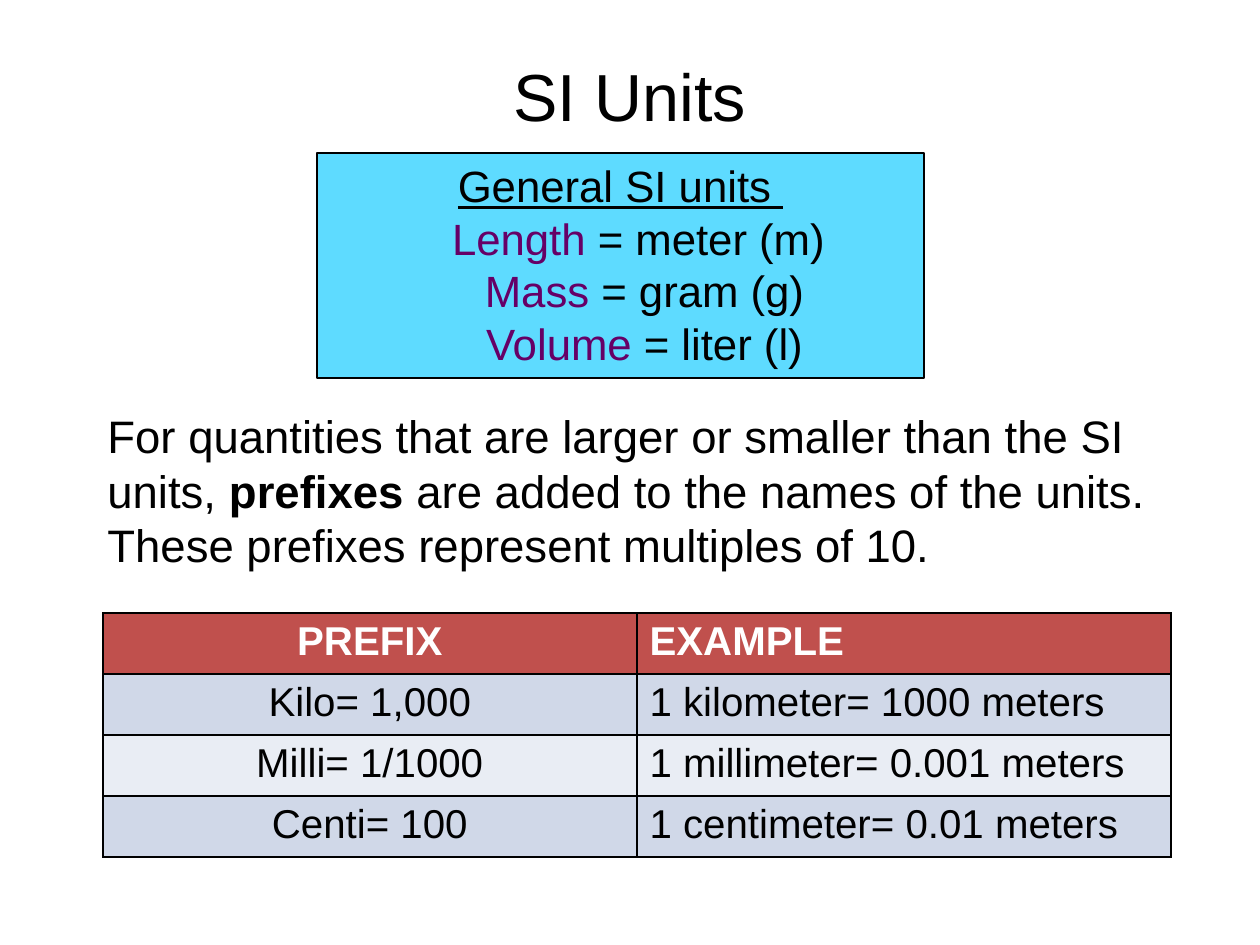
"""Build the SI Units slide."""
from dataclasses import dataclass

from pptx import Presentation
from pptx import util as u
from pptx.dml.color import RGBColor
from pptx.enum import shapes, text
from pptx.oxml import parse_xml
from pptx.oxml.ns import nsdecls

SCALE = 914400 / 126
CENTER = text.PP_ALIGN.CENTER
LEFT = text.PP_ALIGN.LEFT


@dataclass(frozen=True)
class Theme:
    font: str = "Arial"
    ink: str = "000000"
    white: str = "FFFFFF"
    quantity: str = "660066"
    box: str = "5EDBFF"
    header: str = "C0504D"
    bands: tuple = ("D0D8E8", "E9EDF4")
    title_size: int = 38
    box_size: int = 25
    body_size: int = 26
    table_size: int = 23


def px(length):
    return u.Emu(round(length * SCALE))


def add_run(paragraph, words, *, font, size, color, bold=False, underline=False):
    run = paragraph.add_run()
    run.text = words
    run.font.name = font
    run.font.size = u.Pt(size)
    run.font.color.rgb = RGBColor.from_string(color)
    run.font.bold = bold
    run.font.underline = underline


class SlideBuilder:
    def __init__(self, slide, theme):
        self.slide = slide
        self.theme = theme

    def add_words(self, paragraph, words, size, align=LEFT, color=None, **style):
        paragraph.alignment = align
        add_run(paragraph, words, font=self.theme.font, size=size,
                color=color or self.theme.ink, **style)

    def title(self, words, left, top, width, height):
        shape = self.slide.shapes.title
        shape.left, shape.top = px(left), px(top)
        shape.width, shape.height = px(width), px(height)
        frame = shape.text_frame
        frame.vertical_anchor = text.MSO_ANCHOR.MIDDLE
        self.add_words(frame.paragraphs[0], words, self.theme.title_size, CENTER)

    def unit_box(self, heading, lines, left, top, width, height, indent):
        shape = self.slide.shapes.add_shape(
            shapes.MSO_SHAPE.RECTANGLE, px(left), px(top), px(width), px(height))
        shape.shadow.inherit = False
        shape.fill.solid()
        shape.fill.fore_color.rgb = RGBColor.from_string(self.theme.box)
        shape.line.color.rgb = RGBColor.from_string(self.theme.ink)
        shape.line.width = u.Pt(0.75)
        frame = shape.text_frame
        frame.word_wrap = True
        frame.vertical_anchor = text.MSO_ANCHOR.TOP
        size = self.theme.box_size
        self.add_words(frame.paragraphs[0], heading, size, CENTER, underline=True)
        for quantity, unit in lines:
            paragraph = frame.add_paragraph()
            properties = paragraph._p.get_or_add_pPr()
            properties.set("marL", str(px(indent)))
            properties.set("indent", "0")
            self.add_words(paragraph, quantity, size, CENTER, self.theme.quantity)
            self.add_words(paragraph, unit, size, CENTER)

    def body(self, runs, left, top, width, height):
        shape = self.slide.shapes.add_textbox(px(left), px(top), px(width), px(height))
        shape.text_frame.word_wrap = True
        paragraph = shape.text_frame.paragraphs[0]
        for words, bold in runs:
            self.add_words(paragraph, words, self.theme.body_size, bold=bold)

    def table(self, rows, left, top, column_width, row_height):
        columns = len(rows[0])
        table = self.slide.shapes.add_table(
            len(rows), columns, px(left), px(top),
            px(column_width * columns), px(row_height * len(rows))).table
        for column in table.columns:
            column.width = px(column_width)
        for row, values in enumerate(rows):
            table.rows[row].height = px(row_height)
            header = row == 0
            fill = self.theme.header if header else self.theme.bands[(row - 1) % 2]
            color = self.theme.white if header else self.theme.ink
            for column, words in enumerate(values):
                cell = table.cell(row, column)
                self.borders(cell)
                cell.fill.solid()
                cell.fill.fore_color.rgb = RGBColor.from_string(fill)
                self.add_words(cell.text_frame.paragraphs[0], words, self.theme.table_size,
                               LEFT if column else CENTER, color, bold=header)

    def borders(self, cell):
        properties = cell._tc.get_or_add_tcPr()
        for side in ("lnL", "lnR", "lnT", "lnB"):
            properties.append(parse_xml(
                f'<a:{side} {nsdecls("a")} w="{u.Pt(1)}"><a:solidFill>'
                f'<a:srgbClr val="{self.theme.ink}"/></a:solidFill></a:{side}>'))


def main():
    presentation = Presentation()
    presentation.slide_width, presentation.slide_height = px(1260), px(945)
    slide = presentation.slides.add_slide(presentation.slide_layouts[5])
    builder = SlideBuilder(slide, Theme())
    builder.title("SI Units", 38, 38, 1184, 113)
    builder.unit_box("General SI units ", [
        ("Length", " = meter (m) "),
        ("Mass", " = gram (g)"),
        ("Volume", " = liter (l)"),
    ], 317, 153, 607, 225, indent=48)
    builder.body([
        ("For quantities that are larger or smaller than the SI units, ", False),
        ("prefixes", True),
        (" are added to the names of the units. "
         "These prefixes represent multiples of 10.", False),
    ], 95, 402, 1076, 180)
    builder.table([
        ("PREFIX", "EXAMPLE"),
        ("Kilo= 1,000", "1 kilometer= 1000 meters"),
        ("Milli= 1/1000", "1 millimeter= 0.001 meters"),
        ("Centi= 100", "1 centimeter= 0.01 meters"),
    ], 103, 613, column_width=534, row_height=61)
    presentation.save("out.pptx")


if __name__ == "__main__":
    main()
